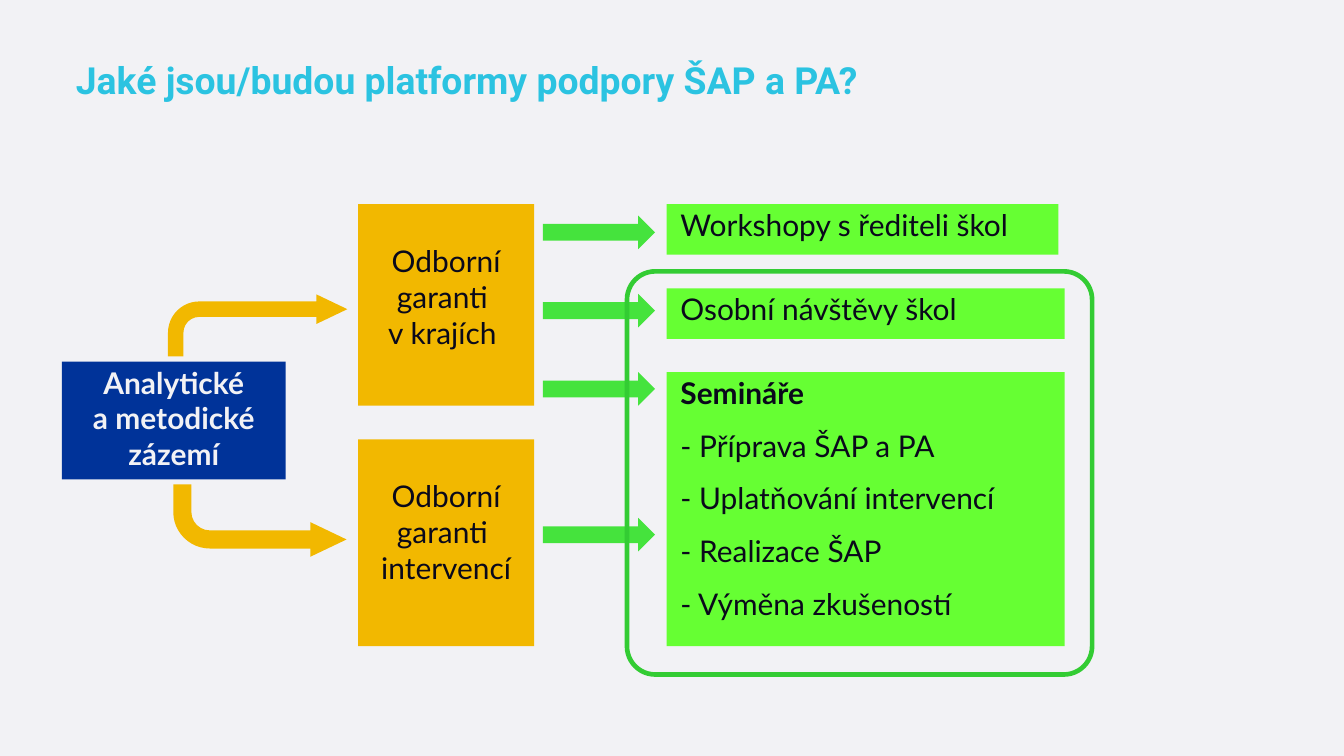
from pptx import Presentation
from pptx.dml.color import RGBColor
from pptx.enum import shapes, text
from pptx.util import Cm, Pt

TITLE = "Jaké jsou/budou platformy podpory ŠAP a PA?"
BACKGROUND, TITLE_COLOR, INK = "F2F2F5", "2BC3E1", "0A091B"
BLUE, YELLOW, GREEN = "003399", "F2B800", "66FF33"
ARROW_GREEN, FRAME_GREEN = "45E33D", "33CC33"

BASE = ["Analytické", "a metodické zázemí"]
GUARANTORS = [
    (7.72, 7.62, ["Odborní garanti ", "v krajích "]),
    (16.61, 7.82, ["Odborní garanti ", "intervencí"]),
]
PLATFORMS = [
    (7.72, 14.81, 1.91, ["Workshopy s řediteli škol"]),
    (14.07, 15.04, 10.36, [
        "Semináře",
        "- Příprava ŠAP a PA",
        "- Uplatňování intervencí",
        "- Realizace ŠAP",
        "- Výměna zkušeností",
    ]),
    (10.9, 15.04, 1.91, ["Osobní návštěvy škol"]),
]
GUARANTOR_X, ARROW_X, PLATFORM_X = 13.54, 20.52, 25.2
ARROW_TOPS = [8.15 + 2.96 * i for i in range(3)] + [19.58]
BENT_ARROWS = [
    (6.35, 11.13, 6.78, 2.34, False),
    (6.55, 18.31, 6.55, 2.74, True),
]
BENT_ADJUSTMENTS = (0.25, 0.239, 0.5, 0.505)
FRAME = (23.7, 10.26, 17.58, 15.24)


def rgb(color):
    return RGBColor.from_string(color)


def style(p, size, font, color, bold=False):
    p.font.size = Pt(size)
    p.font.name = font
    p.font.color.rgb = rgb(color)
    p.font.bold = bold


def add_shape(slide, kind, x, y, w, h, fill=None, line=None):
    s = slide.shapes.add_shape(kind, Cm(x), Cm(y), Cm(w), Cm(h))
    s.shadow.inherit = False
    if fill:
        s.fill.solid()
        s.fill.fore_color.rgb = rgb(fill)
    else:
        s.fill.background()
    if line:
        s.line.color.rgb = rgb(line)
        s.line.width = Pt(5)
    else:
        s.line.fill.background()
    return s


def add_box(slide, x, y, w, h, fill, lines, color=INK, bold=False,
            align=text.PP_ALIGN.CENTER, left=0, top=0.1, gap=0):
    s = add_shape(slide, shapes.MSO_SHAPE.RECTANGLE, x, y, w, h, fill)
    tf = s.text_frame
    tf.word_wrap = True
    tf.vertical_anchor = text.MSO_ANCHOR.TOP
    tf.margin_left, tf.margin_top = Cm(left), Cm(top)
    tf.margin_right, tf.margin_bottom = 0, Cm(0.03)
    for i, line in enumerate(lines):
        p = tf.add_paragraph() if i else tf.paragraphs[0]
        p.text = line
        p.alignment = align
        p.space_before = Pt(gap if i else 0)
        style(p, 32, "Lato", color, bold or (gap > 0 and i == 0 and len(lines) > 1))


def add_title(slide):
    s = slide.shapes.add_textbox(Cm(2.62), Cm(2.24), Cm(45.85), Cm(1.8))
    tf = s.text_frame
    tf.word_wrap = True
    p = tf.paragraphs[0]
    p.text = TITLE
    p.line_spacing = 0.9
    style(p, 40, "Roboto", TITLE_COLOR, True)


def main():
    prs = Presentation()
    prs.slide_width, prs.slide_height = Cm(50.8), Cm(28.58)
    slide = prs.slides.add_slide(prs.slide_layouts[6])
    slide.background.fill.solid()
    slide.background.fill.fore_color.rgb = rgb(BACKGROUND)

    add_title(slide)
    add_box(slide, 2.34, 13.67, 8.46, 4.45, BLUE, BASE, BACKGROUND, True)
    for y, h, lines in GUARANTORS:
        add_box(slide, GUARANTOR_X, y, 6.65, h, YELLOW, lines, top=1.45)
    for y, w, h, lines in PLATFORMS:
        add_box(slide, PLATFORM_X, y, w, h, GREEN, lines,
                align=text.PP_ALIGN.LEFT, left=0.52, gap=18)

    for y in ARROW_TOPS:
        add_shape(slide, shapes.MSO_SHAPE.RIGHT_ARROW, ARROW_X, y, 4.24, 1.27, ARROW_GREEN)
    for x, y, w, h, flipped in BENT_ARROWS:
        s = add_shape(slide, shapes.MSO_SHAPE.BENT_ARROW, x, y, w, h, YELLOW)
        for i, value in enumerate(BENT_ADJUSTMENTS):
            s.adjustments[i] = value
        if flipped:
            s._element.spPr.xfrm.set("flipV", "1")

    frame = add_shape(slide, shapes.MSO_SHAPE.ROUNDED_RECTANGLE, *FRAME, line=FRAME_GREEN)
    frame.adjustments[0] = 0.07
    prs.save("out.pptx")


if __name__ == "__main__":
    main()
